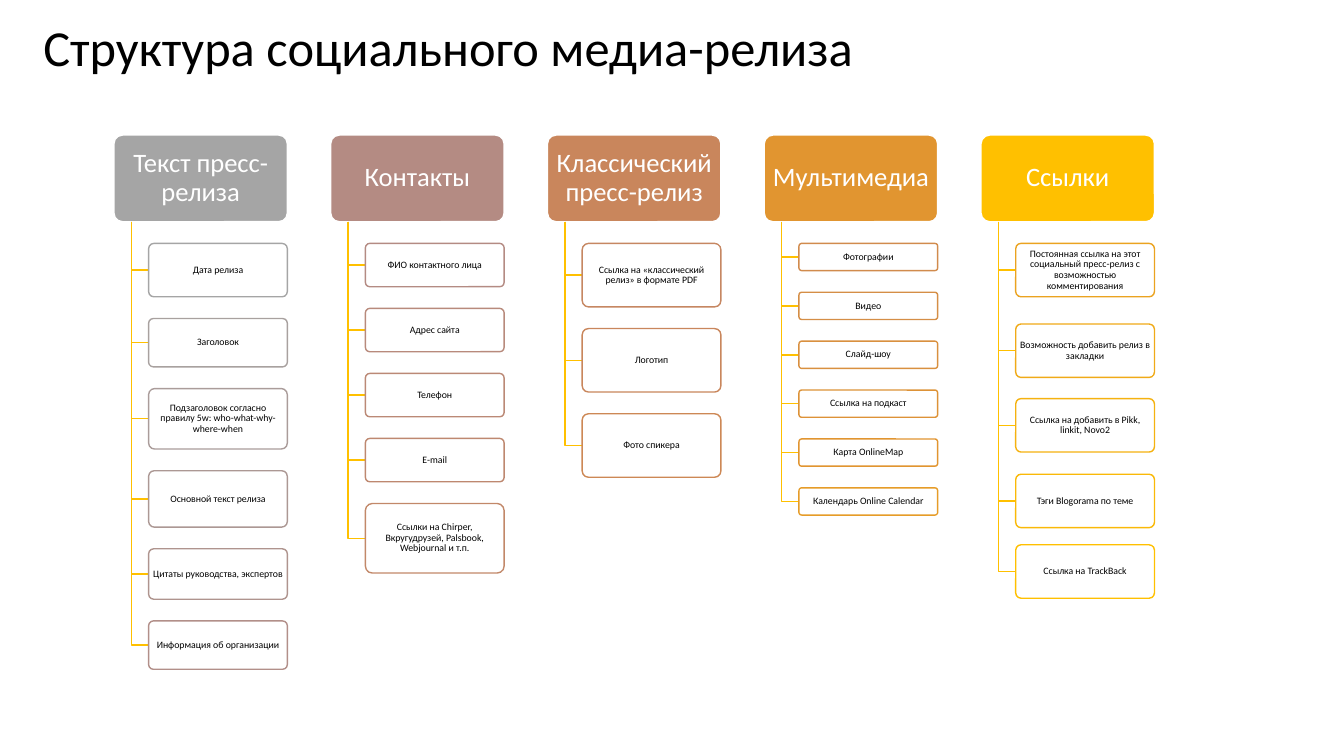
from itertools import count

from pptx import Presentation
from pptx.dml.color import RGBColor
from pptx.enum.shapes import MSO_SHAPE as Preset
from pptx.enum.text import MSO_ANCHOR as Anchor, MSO_AUTO_SIZE as AutoSize, PP_ALIGN as Align
from pptx.util import Inches, Pt

FONT = "Calibri"
BLACK = RGBColor(0x00, 0x00, 0x00)
WHITE = RGBColor(0xFF, 0xFF, 0xFF)
GREY = RGBColor(0xA5, 0xA5, 0xA5)
ROSE = RGBColor(0xB4, 0x8B, 0x83)
COPPER = RGBColor(0xC9, 0x86, 0x5C)
ORANGE = RGBColor(0xE1, 0x95, 0x30)
GOLD = RGBColor(0xFF, 0xC0, 0x00)
PALETTE = [GREY, ROSE, COPPER, ORANGE, GOLD]

SLIDE_WIDTH, SLIDE_HEIGHT = 13.33, 7.5
LEFT, TOP = 1.13, 1.34
HEADER_WIDTH = 1.72
HEADER_HEIGHT = HEADER_WIDTH / 2
COLUMN_PITCH = HEADER_WIDTH * 1.25
STEM_INDENT = HEADER_WIDTH * 0.1
ITEM_INDENT = HEADER_WIDTH * 0.2
ITEM_WIDTH = HEADER_WIDTH * 0.8
ITEM_GAP = HEADER_HEIGHT / 4

TITLE = "Структура социального медиа-релиза"
COLUMNS = [
    ("Текст пресс-релиза", [
        ("Дата релиза", 0.53),
        ("Заголовок", 0.48),
        ("Подзаголовок согласно правилу 5w: who-what-why-where-when", 0.6),
        ("Основной текст релиза", 0.56),
        ("Цитаты руководства, экспертов", 0.5),
        ("Информация об организации", 0.48),
    ], []),
    ("Контакты", [
        ("ФИО контактного лица", 0.43),
        ("Адрес сайта", 0.43),
        ("Телефон", 0.43),
        ("E-mail", 0.43),
        ("Ссылки на Chirper, Вкругудрузей, Palsbook, Webjournal и т.п.", 0.69),
    ], []),
    ("Классический пресс-релиз", [
        ("Ссылка на «классический релиз» в формате PDF", 0.63),
        ("Логотип", 0.63),
        ("Фото спикера", 0.63),
    ], []),
    ("Мультимедиа", [
        ("Фотографии", 0.27),
        ("Видео", 0.27),
        ("Слайд-шоу", 0.27),
        ("Ссылка на подкаст", 0.27),
        ("Карта OnlineMap", 0.27),
        ("Календарь Online Calendar", 0.27),
    ], []),
    ("Ссылки", [
        ("Постоянная ссылка на этот социальный пресс-релиз с возможностью комментирования", 0.53),
        ("Возможность добавить релиз в закладки", 0.53),
        ("Ссылка на добавить в Pikk, linkit, Novo2", 0.53),
        ("Тэги Blogorama по теме", 0.53),
        ("Ссылка на TrackBack", 0.53),
    ], [ITEM_GAP, 0.27, 0.21, 0.22, 0.17]),
]
ITEM_COUNT = sum(len(items) for _, items, _ in COLUMNS)


def shade(share):
    """Return the palette colour at a share from 0 to 1."""
    position = share * (len(PALETTE) - 1)
    start = min(int(position), len(PALETTE) - 2)
    pairs = zip(PALETTE[start], PALETTE[start + 1])
    return RGBColor(*(round(a + (b - a) * (position - start)) for a, b in pairs))


def write(shape, text, size, color=BLACK, align=Align.CENTER, inset=0.02):
    """Put one formatted paragraph into a shape."""
    frame = shape.text_frame
    frame.word_wrap = True
    frame.auto_size = AutoSize.NONE
    frame.vertical_anchor = Anchor.MIDDLE
    frame.margin_left = frame.margin_right = Inches(inset)
    frame.margin_top = frame.margin_bottom = Inches(0.02)
    frame.text = text
    paragraph = frame.paragraphs[0]
    paragraph.alignment = align
    paragraph.line_spacing = 0.9
    paragraph.font.name = FONT
    paragraph.font.size = Pt(size)
    paragraph.font.color.rgb = color


def add_card(slide, box, fill, line):
    """Add a rounded rectangle in a box given in inches."""
    card = slide.shapes.add_shape(Preset.ROUNDED_RECTANGLE, *map(Inches, box))
    card.adjustments[0] = 0.1
    card.shadow.inherit = False
    card.fill.solid()
    card.fill.fore_color.rgb = fill
    card.line.color.rgb = line
    card.line.width = Pt(1)
    return card


def add_branch(slide, left, top, right, bottom):
    """Draw the elbow from a header down to an item."""
    builder = slide.shapes.build_freeform(Inches(left), Inches(top))
    corners = [(left, bottom), (right, bottom)]
    builder.add_line_segments([(Inches(x), Inches(y)) for x, y in corners], close=False)
    branch = builder.convert_to_shape()
    branch.shadow.inherit = False
    branch.fill.background()
    branch.line.color.rgb = GOLD
    branch.line.width = Pt(1)


def add_title(slide, left, top, width, height):
    """Place and format the title placeholder."""
    title = slide.shapes.title
    title.left, title.top, title.width, title.height = map(Inches, (left, top, width, height))
    write(title, TITLE, size=36, align=Align.LEFT, inset=0.1)


def add_column(slide, left, top, column, color, item_numbers):
    """Draw a header with its items hanging below."""
    heading, items, gaps = column
    header = add_card(slide, (left, top, HEADER_WIDTH, HEADER_HEIGHT), color, WHITE)
    write(header, heading, size=19, color=WHITE, inset=0.06)
    header_bottom = bottom = top + HEADER_HEIGHT
    item_left = left + ITEM_INDENT
    for (text, height), gap in zip(items, gaps or [ITEM_GAP] * len(items)):
        item_top = bottom + gap
        bottom = item_top + height
        add_branch(slide, left + STEM_INDENT, header_bottom, item_left, item_top + height / 2)
        line = shade(next(item_numbers) / (ITEM_COUNT - 1))
        item = add_card(slide, (item_left, item_top, ITEM_WIDTH, height), WHITE, line)
        write(item, text, size=7)


def main():
    """Build and save the presentation."""
    presentation = Presentation()
    presentation.slide_width = Inches(SLIDE_WIDTH)
    presentation.slide_height = Inches(SLIDE_HEIGHT)
    slide = presentation.slides.add_slide(presentation.slide_layouts[5])
    add_title(slide, 0.33, -0.23, 11.5, 1.45)
    item_numbers = count()
    for index, (column, color) in enumerate(zip(COLUMNS, PALETTE)):
        add_column(slide, LEFT + index * COLUMN_PITCH, TOP, column, color, item_numbers)
    presentation.save("out.pptx")


if __name__ == "__main__":
    main()
